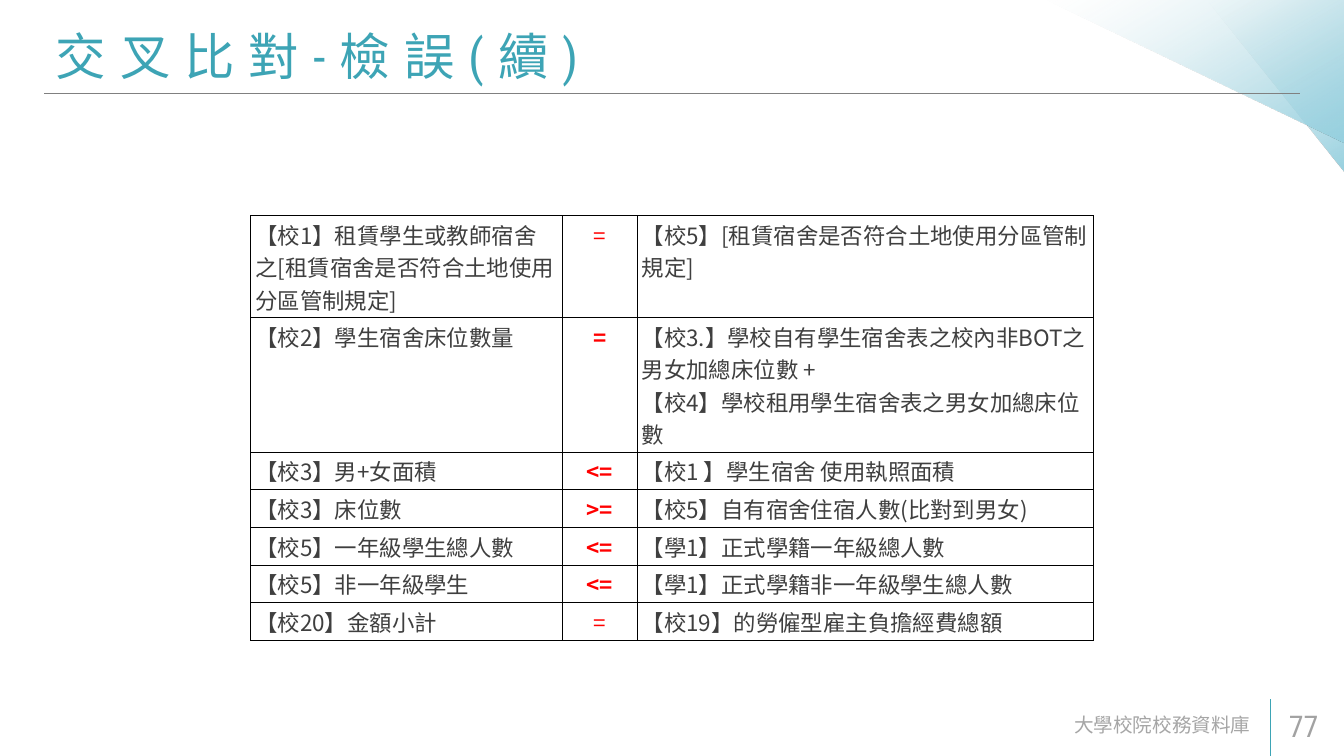
from dataclasses import dataclass
from lxml.etree import SubElement as Sub
from pptx import Presentation
from pptx.dml.color import RGBColor as RGB
from pptx.enum.shapes import MSO_CONNECTOR as Conn, MSO_SHAPE as Shape
from pptx.enum.text import MSO_ANCHOR as Anchor, PP_ALIGN as Align
from pptx.oxml.ns import qn
from pptx.util import Inches, Pt

W, H = 20, 11.25
COLORS = {"teal": "3DA4B5", "rule": "808080", "footer": "A6A6A6", "number": "A2A2A2",
          "body": "3F3F3F", "sign": "FF0000", "border": "000000"}
STOPS = ((0, "97D1E0", 100), (50, "AAD7E2", 44), (100, "E0F0F4", 0))
CJK = "Noto Sans CJK SC"
COLS = (4.64, 1.11, 6.79)
LINE_H, PAD_H = 0.48, 0.08


@dataclass(frozen=True)
class Style:
    font: str
    size: float
    color: str
    bold: bool = False
    spacing: float = 0
    align: Align = Align.LEFT


@dataclass(frozen=True)
class Label:
    text: str
    x: float
    y: float
    w: float
    h: float
    style: Style


@dataclass(frozen=True)
class Check:
    left: str
    sign: str
    right: tuple[str, ...]
    bold: bool = True
    lines: int = 1


LABELS = (
    Label("交叉比對-檢誤(續)", 0.65, 0.21, 18.31, 1.23,
          Style("Roboto Condensed", 54, "teal", spacing=15)),
    Label("大學校院校務資料庫", 10.29, 10.49, 8.5, 0.6,
          Style("Roboto", 21, "footer", align=Align.RIGHT)),
    Label("77", 19, 10.49, 0.99, 0.6, Style("Roboto Condensed", 32, "number")),
)
CHECKS = (
    Check("【校1】租賃學生或教師宿舍之[租賃宿舍是否符合土地使用分區管制規定]", "=",
          ("【校5】[租賃宿舍是否符合土地使用分區管制規定]",), False, 3),
    Check("【校2】學生宿舍床位數量", "=",
          ("【校3.】學校自有學生宿舍表之校內非BOT之男女加總床位數 +",
           "【校4】學校租用學生宿舍表之男女加總床位數"), lines=4),
    Check("【校3】男+女面積", "<=", ("【校1 】學生宿舍 使用執照面積",)),
    Check("【校3】床位數", ">=", ("【校5】自有宿舍住宿人數(比對到男女)",)),
    Check("【校5】一年級學生總人數", "<=", ("【學1】正式學籍一年級總人數",)),
    Check("【校5】非一年級學生", "<=", ("【學1】正式學籍非一年級學生總人數",)),
    Check("【校20】金額小計", "=", ("【校19】的勞僱型雇主負擔經費總額",), False),
)


def add_run(p, text: str, style: Style) -> None:
    p.alignment = style.align
    r = p.add_run()
    r.text = text
    r.font.name, r.font.size, r.font.bold = style.font, Pt(style.size), style.bold
    r.font.color.rgb = RGB.from_string(COLORS[style.color])
    rPr = r._r.get_or_add_rPr()
    Sub(rPr, qn("a:ea"), typeface=CJK)
    if style.spacing:
        rPr.set("spc", str(int(style.spacing * 100)))


def add_label(s, label: Label) -> None:
    tf = s.shapes.add_textbox(*map(Inches, (label.x, label.y, label.w, label.h))).text_frame
    tf.word_wrap, tf.vertical_anchor = True, Anchor.MIDDLE
    tf.margin_left = tf.margin_right = Inches(0.18)
    tf.margin_top = tf.margin_bottom = Inches(0.09)
    add_run(tf.paragraphs[0], label.text, label.style)


def add_corner(s, x: float, w: float, h: float) -> None:
    sp = s.shapes.add_shape(Shape.RIGHT_TRIANGLE, *map(Inches, (x, 0, w, h)))
    sp.rotation = 180
    sp.shadow.inherit = False
    sp.line.fill.background()
    sp.fill.gradient()
    sp.fill.gradient_angle = 300
    stops = sp._element.spPr.find(qn("a:gradFill")).find(qn("a:gsLst"))
    for old in list(stops):
        stops.remove(old)
    for pos, color, alpha in STOPS:
        gs = Sub(stops, qn("a:gs"), pos=str(pos * 1000))
        clr = Sub(gs, qn("a:srgbClr"), val=color)
        Sub(clr, qn("a:alpha"), val=str(alpha * 1000))


def add_rule(s, x1: float, y1: float, x2: float, y2: float, color: str) -> None:
    line = s.shapes.add_connector(Conn.STRAIGHT, *map(Inches, (x1, y1, x2, y2)))
    line.line.color.rgb = RGB.from_string(COLORS[color])
    line.line.width = Pt(1)
    Sub(line._element.spPr, qn("a:effectLst"))


def fill_cell(cell, texts: tuple[str, ...], style: Style) -> None:
    cell.margin_left = cell.margin_right = Inches(0.07)
    cell.margin_top = cell.margin_bottom = Inches(PAD_H / 2)
    tcPr = cell._tc.get_or_add_tcPr()
    for side in ("a:lnL", "a:lnR", "a:lnT", "a:lnB"):
        fill = Sub(Sub(tcPr, qn(side), w=str(Pt(1))), qn("a:solidFill"))
        Sub(fill, qn("a:srgbClr"), val=COLORS["border"])
    cell.fill.background()
    tf = cell.text_frame
    for i, text in enumerate(texts):
        add_run(tf.add_paragraph() if i else tf.paragraphs[0], text, style)


def add_checks(s, x: float, y: float) -> None:
    heights = [check.lines * LINE_H + PAD_H for check in CHECKS]
    table = s.shapes.add_table(len(CHECKS), len(COLS), Inches(x), Inches(y),
                               Inches(sum(COLS)), Inches(sum(heights))).table
    table.first_row = table.horz_banding = False
    for col, width in zip(table.columns, COLS):
        col.width = Inches(width)
    body = Style(CJK, 24, "body")
    for row, check, height in zip(table.rows, CHECKS, heights):
        row.height = Inches(height)
        sign = Style(CJK, 24, "sign", check.bold, align=Align.CENTER)
        texts = ((check.left,), (check.sign,), check.right)
        for cell, text, style in zip(row.cells, texts, (body, sign, body)):
            fill_cell(cell, text, style)


def main() -> None:
    """Build the cross-check slide and save it."""
    prs = Presentation()
    prs.slide_width, prs.slide_height = Inches(W), Inches(H)
    s = prs.slides.add_slide(prs.slide_layouts[6])
    add_corner(s, 17.96, 2.04, 2.57)
    add_corner(s, 15.54, 4.48, 2.13)
    add_rule(s, 0.66, 1.39, W - 0.66, 1.39, "rule")
    add_rule(s, 18.91, H, 18.91, 10.4, "teal")
    for label in LABELS:
        add_label(s, label)
    add_checks(s, (W - sum(COLS)) / 2, 3.21)
    prs.save("out.pptx")


if __name__ == "__main__":
    main()
